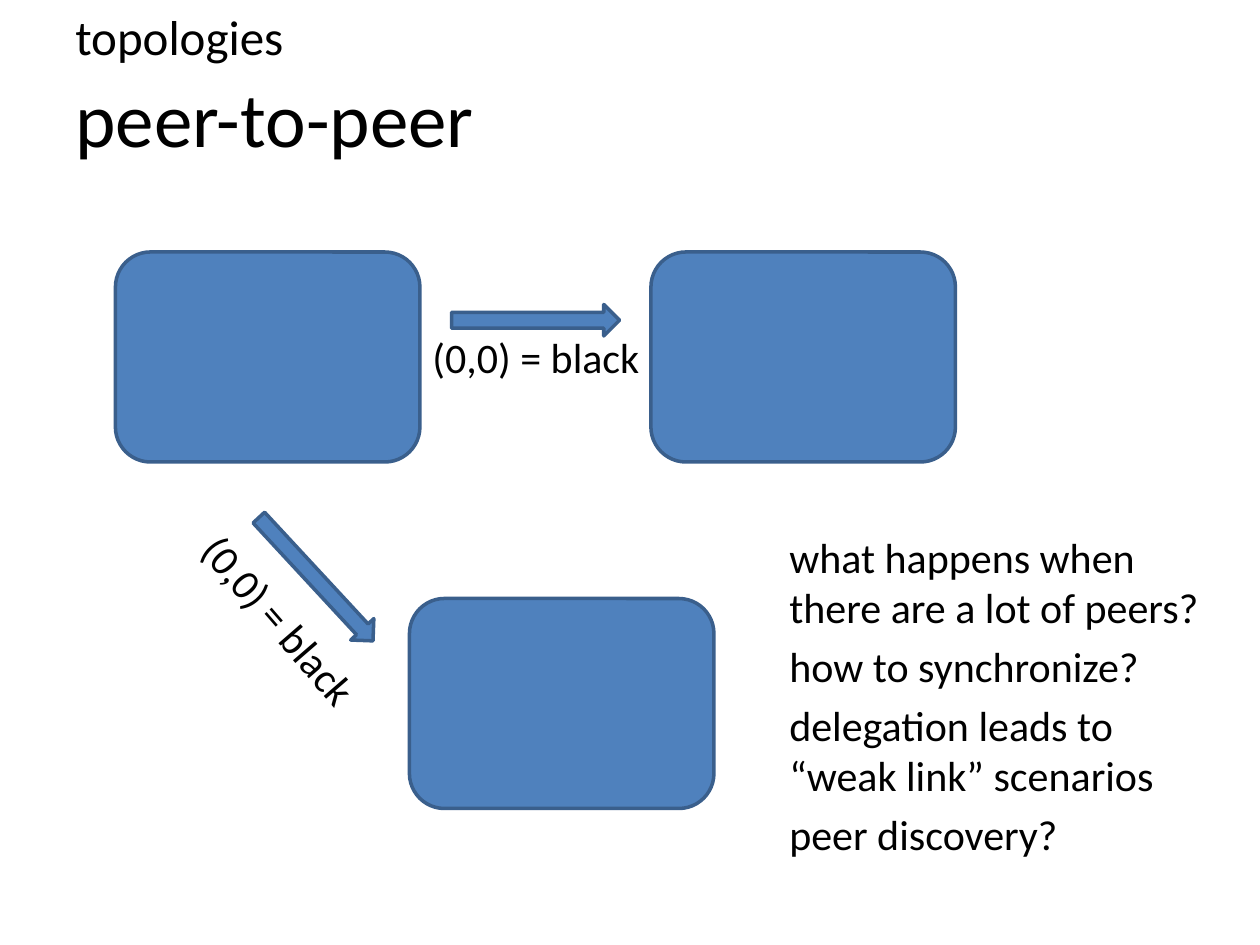
"""Build the peer-to-peer topology slide."""
from pptx import Presentation
from pptx import util as u
from pptx.dml.color import RGBColor
from pptx.enum import shapes, text

Pt = u.Pt
deck = Presentation()
deck.slide_width, deck.slide_height = Pt(720), Pt(540)
slide = deck.slides.add_slide(deck.slide_layouts[6])


def paint(color, code):
    color.rgb = RGBColor.from_string(code)


def write(lines, size, box, turn=0, gap=0, anchor=text.MSO_ANCHOR.TOP):
    label = slide.shapes.add_textbox(*map(Pt, box))
    label.rotation = turn
    frame = label.text_frame
    frame.word_wrap = True
    frame.vertical_anchor = anchor
    frame.text = "\n".join(lines)
    for para in frame.paragraphs:
        para.space_before = Pt(gap)
        para.font.name, para.font.size = "Calibri", Pt(size)
        paint(para.font.color, "000000")


write(["peer-to-peer"], 44, (36, 21.6, 648, 90), anchor=text.MSO_ANCHOR.MIDDLE)
write(["topologies"], 28, (36, 0, 648, 42), gap=5.6)

kind = shapes.MSO_SHAPE
peers = [(kind.ROUNDED_RECTANGLE, x, y, 174, 120, 0)
         for x, y in [(66, 144), (372, 144), (234, 342)]]
arrows = [(kind.RIGHT_ARROW, x, y, 96, 18, turn)
          for x, y, turn in [(258, 174, 0), (132.5, 322, 47.2)]]
for form, x, y, wide, high, turn in peers + arrows:
    shape = slide.shapes.add_shape(form, Pt(x), Pt(y), Pt(wide), Pt(high))
    shape.rotation = turn
    shape.shadow.inherit = False
    shape.fill.solid()
    paint(shape.fill.fore_color, "4F81BD")
    paint(shape.line.color, "3A5F8C")
    shape.line.width = Pt(2)

for box, turn in [((240, 186, 156, 30), 0), ((88.5, 353, 174, 30), 49.2)]:
    write(["(0,0) = black"], 24, box, turn, gap=4.8)

write(["what happens when there are a lot of peers?",
       "how to synchronize?",
       "delegation leads to “weak link” scenarios",
       "peer discovery?"], 24, (444, 300, 252, 222), gap=4.8)

deck.save("out.pptx")
